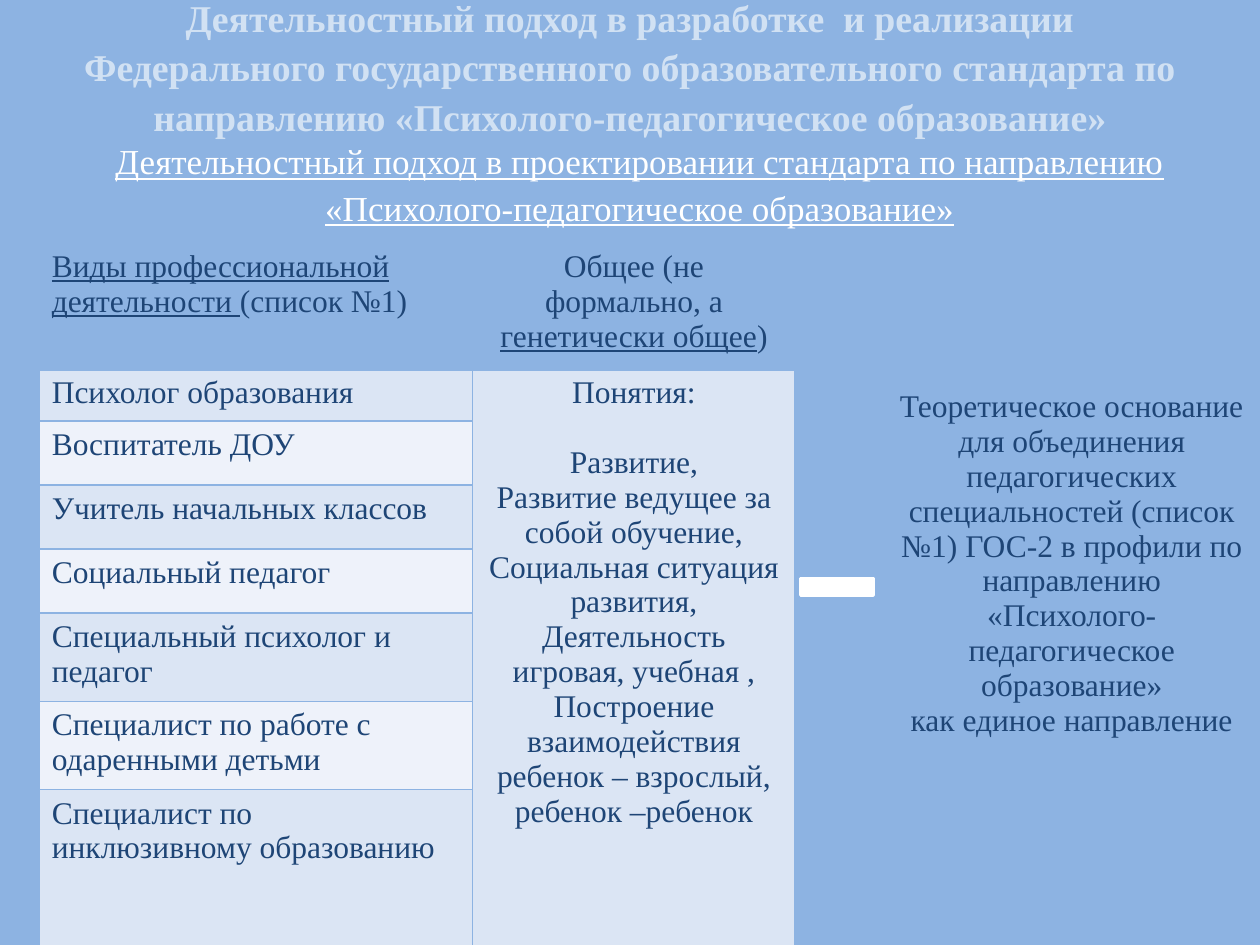
from dataclasses import dataclass

from lxml.etree import SubElement
from pptx import Presentation
from pptx.dml.color import RGBColor
from pptx.enum.shapes import MSO_SHAPE as Shape
from pptx.enum.text import MSO_ANCHOR as Anchor, PP_ALIGN as Align
from pptx.oxml.ns import qn
from pptx.util import Cm, Pt

BACK, WHITE, PALE, INK = "8DB3E2", "FFFFFF", "D1E1F3", "1E4576"
BANDS = "DBE5F4", "EEF2FA"
LEFT, MID = Align.LEFT, Align.CENTER


@dataclass
class Run:
    text: str
    line: bool = False


@dataclass
class Par:
    runs: list[Run]
    align: Align = MID
    after: float = 0
    lead: float = 1


@dataclass
class Style:
    size: float
    color: str
    bold: bool = False


@dataclass
class Box:
    left: float
    top: float
    width: float
    height: float

    def place(self) -> list[Cm]:
        return [Cm(v) for v in (self.left, self.top, self.width, self.height)]


CELL = Style(18, INK)


def rgb(code: str) -> RGBColor:
    return RGBColor.from_string(code)


def paint(fill, code: str) -> None:
    fill.solid()
    fill.fore_color.rgb = rgb(code)


def plain(text: str, **form) -> Par:
    return Par([Run(text)], **form)


def write(frame, pars: list[Par], style: Style) -> None:
    for i, par in enumerate(pars):
        p = frame.paragraphs[0] if i == 0 else frame.add_paragraph()
        form = {"alignment": par.align, "space_after": Pt(par.after),
                "line_spacing": par.lead}
        for key, val in form.items():
            setattr(p, key, val)
        for part in par.runs:
            run = p.add_run()
            run.text = part.text
            font = {"name": "Times New Roman", "size": Pt(style.size),
                    "bold": style.bold, "underline": part.line}
            for key, val in font.items():
                setattr(run.font, key, val)
            run.font.color.rgb = rgb(style.color)


def label(slide, box: Box, par: Par, style: Style, **form) -> None:
    frame = slide.shapes.add_textbox(*box.place()).text_frame
    for key, val in {"word_wrap": True, **form}.items():
        setattr(frame, key, val)
    write(frame, [par], style)


def edge(cell, base: float) -> None:
    props = cell._tc.get_or_add_tcPr()
    for side, wide in {"L": 1, "R": 1, "T": 1, "B": base}.items():
        line = SubElement(props, qn(f"a:ln{side}"), w=str(Pt(wide)))
        fill = SubElement(line, qn("a:solidFill"))
        SubElement(fill, qn("a:srgbClr"), val=BACK)


# Table content
HEAD = Par([Run("Виды профессиональной деятельности ", True),
            Run("(список №1)")], LEFT)
SHARED = Par([Run("Общее (не формально, а "),
              Run("генетически общее", True), Run(")")])
JOBS = ["Психолог образования", "Воспитатель ДОУ",
        "Учитель начальных классов", "Социальный педагог",
        "Специальный психолог и педагог",
        "Специалист по работе с одаренными детьми",
        "Специалист по инклюзивному образованию"]
IDEAS = [plain("Понятия:", after=20)] + [plain(t) for t in (
    "Развитие,",
    "Развитие ведущее за собой обучение,",
    "Социальная ситуация развития,",
    "Деятельность игровая, учебная ,",
    "Построение взаимодействия ребенок – взрослый, ребенок –ребенок")]
BASIS = [plain(t) for t in (
    "Теоретическое основание для объединения педагогических специальностей "
    "(список №1) ГОС-2 в профили по направлению "
    "«Психолого-педагогическое образование»",
    "как единое направление")]
COLS = 8.74, 6.5, 1.78, 7.59
ROWS = 2.4, 1.05, 1.29, 1.29, 1.29, 1.7, 1.7, 3.5


def grid(slide) -> None:
    box = Box(0.79, 4.9, sum(COLS), sum(ROWS))
    table = slide.shapes.add_table(len(ROWS), len(COLS), *box.place()).table
    for col, wide in zip(table.columns, COLS):
        col.width = Cm(wide)
    for r, high in enumerate(ROWS):
        table.rows[r].height = Cm(high)
        for c in range(len(COLS)):
            cell = table.cell(r, c)
            edge(cell, 1 if r else 3)
            band = BANDS[(r - 1) % 2] if c == 0 else BANDS[0]
            paint(cell.fill, band if r and c < 2 else BACK)

    # Tall cells run down to the last row
    last = len(ROWS) - 1
    for r, c in ((1, 1), (0, 2), (0, 3)):
        table.cell(r, c).merge(table.cell(last, c))
    table.cell(0, 3).margin_top = Cm(2.95)

    texts = {(0, 0): [HEAD], (0, 1): [SHARED], (1, 1): IDEAS, (0, 3): BASIS}
    texts |= {(r, 0): [plain(job, align=LEFT)] for r, job in enumerate(JOBS, 1)}
    for (r, c), pars in texts.items():
        write(table.cell(r, c).text_frame, pars, CELL)


def minus(slide, box: Box) -> None:
    sign = slide.shapes.add_shape(Shape.MATH_MINUS, *box.place())
    sign.shadow.inherit = False
    paint(sign.fill, WHITE)
    paint(sign.line.fill, WHITE)
    sign.line.width = Pt(2)


def main() -> None:
    deck = Presentation()
    deck.slide_width, deck.slide_height = Cm(25.4), Cm(19.05)
    slide = deck.slides.add_slide(deck.slide_layouts[6])
    paint(slide.background.fill, BACK)

    # Headings
    label(slide, Box(1.27, 0, 22.86, 2.6), plain(
        "Деятельностный подход в разработке  и реализации Федерального "
        "государственного образовательного стандарта по направлению "
        "«Психолого-педагогическое образование»", lead=1.09),
        Style(21.6, PALE, True), vertical_anchor=Anchor.MIDDLE)
    label(slide, Box(0, 2.6, 24.82, 15.88), Par([Run(
        "Деятельностный подход в проектировании стандарта по направлению "
        "«Психолого-педагогическое образование»", True)], lead=1.11),
        Style(20, WHITE), margin_left=Cm(1.22))

    # Table and sign
    grid(slide)
    minus(slide, Box(15.88, 11.13, 1.98, 1.4))
    deck.save("out.pptx")


if __name__ == "__main__":
    main()
